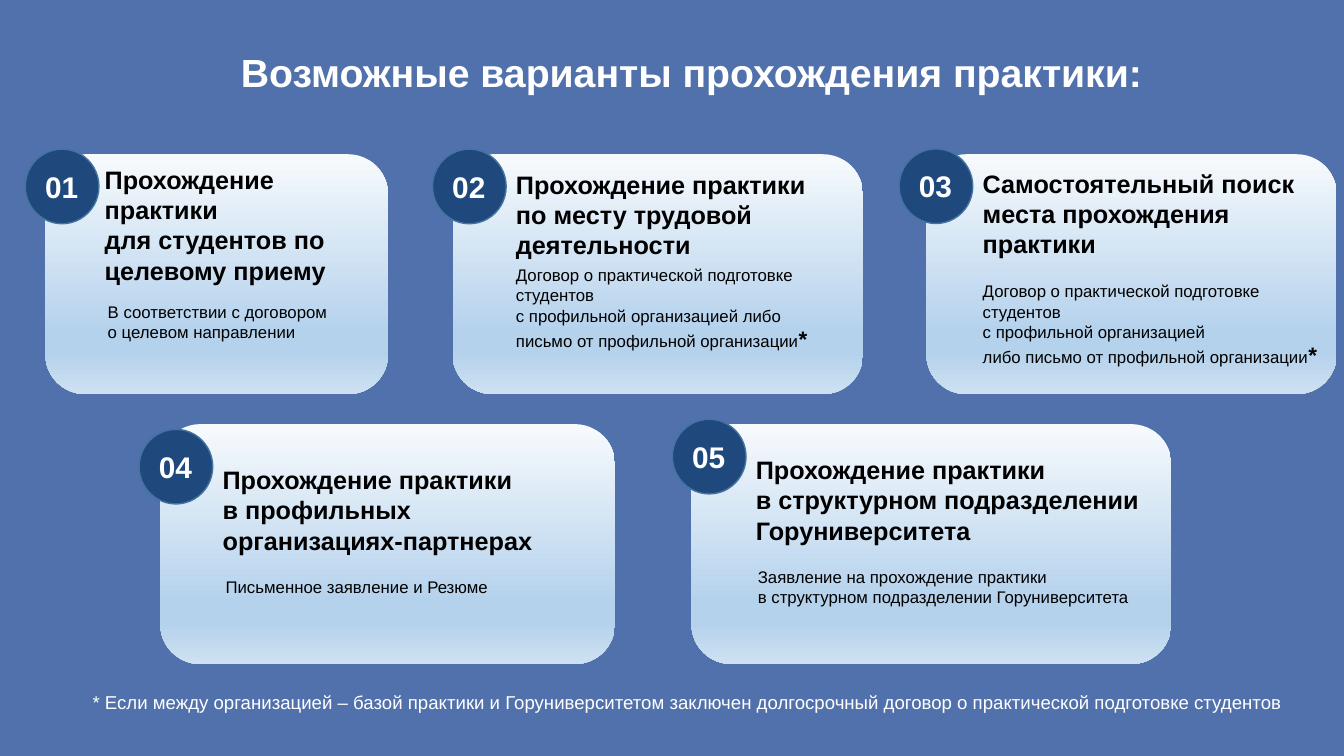
from copy import deepcopy
from dataclasses import dataclass

from pptx import Presentation
from pptx.dml.color import RGBColor
from pptx.enum.shapes import MSO_SHAPE as Preset
from pptx.enum.text import MSO_AUTO_SIZE as AutoSize, PP_ALIGN as Align
from pptx.oxml.ns import qn
from pptx.util import Inches, Pt

BACKGROUND = RGBColor(0x51, 0x71, 0xAC)
BADGE_FILL = RGBColor(0x1F, 0x49, 0x7D)
BADGE_LINE = RGBColor(0x43, 0x73, 0x9E)
WHITE = RGBColor(0xFF, 0xFF, 0xFF)
BLACK = RGBColor(0x00, 0x00, 0x00)
CARD_STOPS = [
    (0, RGBColor(0xF7, 0xFA, 0xFD)),
    (0.74, RGBColor(0xB5, 0xD2, 0xEC)),
    (0.83, RGBColor(0xB5, 0xD2, 0xEC)),
    (1, RGBColor(0xCE, 0xE1, 0xF2)),
]

# The slide is a grid of 100 columns by 100 rows
WIDTH, HEIGHT = Inches(13.33), Inches(7.5)
COLUMN, ROW = WIDTH / 100, HEIGHT / 100
TOP_ROW, BOTTOM_ROW = 20.4, 56.1
CARD_HEIGHT = 31.73
BADGE_WIDTH, BADGE_HEIGHT = 5.48, 9.87

TITLE = {"size": Pt(28), "bold": True, "color": WHITE}
HEADING = {"size": Pt(18), "bold": True, "color": BLACK}
DETAIL = {"size": Pt(12), "bold": False, "color": BLACK}
ASTERISK = {"size": Pt(16), "bold": True, "color": BLACK}
NUMBER = {"size": Pt(21.3), "bold": True, "color": WHITE}
FOOTNOTE = {"size": Pt(13.3), "bold": False, "color": WHITE}


@dataclass
class Option:
    """One practice option; boxes are left, top, width, height in grid units."""
    left: float
    top: float
    width: float
    badge: tuple
    heading_box: tuple
    heading: list
    detail_box: tuple
    detail: list


OPTIONS = [
    Option(3.38, TOP_ROW, 25.5, (1.88, 19.73),
           (7.05, 21.07, 20.63, 17.47),
           ["Прохождение практики", "для студентов по целевому приему"],
           (7.28, 39.2, 22.5, 6.67),
           ["В соответствии с договором", "о целевом направлении"]),
    Option(33.68, TOP_ROW, 30.53, (32.18, 19.73),
           (37.65, 21.73, 25.28, 13.47),
           ["Прохождение практики по месту трудовой деятельности"],
           (37.65, 34.4, 25.2, 13.07),
           ["Договор о практической подготовке студентов",
            "с профильной организацией либо письмо от профильной организации*"]),
    Option(68.93, TOP_ROW, 30.53, (66.9, 19.7),
           (72.38, 21.6, 25.28, 13.47),
           ["Самостоятельный поиск места прохождения практики"],
           (72.38, 36.53, 27.6, 13.07),
           ["Договор о практической подготовке студентов",
            "с профильной организацией",
            "либо письмо от профильной организации*"]),
    Option(11.93, BOTTOM_ROW, 33.83, (10.35, 56.8),
           (15.83, 60.8, 27.98, 13.47),
           ["Прохождение практики", "в профильных организациях-партнерах"],
           (16.05, 75.6, 29.63, 4),
           ["Письменное заявление и Резюме"]),
    Option(51.45, BOTTOM_ROW, 35.7, (50.03, 55.47),
           (55.5, 59.47, 32.85, 13.47),
           ["Прохождение практики",
            "в структурном подразделении Горуниверситета"],
           (55.65, 74.27, 30.38, 6.67),
           ["Заявление на прохождение практики",
            "в структурном подразделении Горуниверситета"]),
]


def place(left, top, width, height):
    """Turn grid units into slide lengths."""
    return (round(left * COLUMN), round(top * ROW),
            round(width * COLUMN), round(height * ROW))


def add_run(paragraph, text, style):
    run = paragraph.add_run()
    run.text = text
    run.font.name = "Arial"
    for name, value in style.items():
        if name == "color":
            run.font.color.rgb = value
        else:
            setattr(run.font, name, value)


def add_text(slide, box, lines, style, wrap=True, grow=True, **paragraph_format):
    """Add a text box; an asterisk that ends a line is set larger and bold."""
    frame = slide.shapes.add_textbox(*place(*box)).text_frame
    frame.word_wrap = wrap
    frame.auto_size = AutoSize.SHAPE_TO_FIT_TEXT if grow else AutoSize.NONE
    for index, line in enumerate(lines):
        paragraph = frame.add_paragraph() if index else frame.paragraphs[0]
        for name, value in paragraph_format.items():
            setattr(paragraph, name, value)
        add_run(paragraph, line.removesuffix("*"), style)
        if line.endswith("*"):
            add_run(paragraph, "*", ASTERISK)


def add_shape(slide, preset, box):
    shape = slide.shapes.add_shape(preset, *place(*box))
    shape.shadow.inherit = False
    return shape


def add_card(slide, box):
    card = add_shape(slide, Preset.ROUNDED_RECTANGLE, box)
    card.line.fill.background()
    card.fill.gradient()
    card.fill.gradient_angle = 270
    # The default gradient has two stops, so more are cloned
    stop_list = next(card.element.iter(qn("a:gsLst")))
    while len(stop_list) < len(CARD_STOPS):
        stop_list.append(deepcopy(stop_list[0]))
    for stop, (position, color) in zip(card.fill.gradient_stops, CARD_STOPS):
        stop.position = position
        stop.color.rgb = color


def add_badge(slide, left, top, number):
    badge = add_shape(slide, Preset.OVAL, (left, top, BADGE_WIDTH, BADGE_HEIGHT))
    badge.fill.solid()
    badge.fill.fore_color.rgb = BADGE_FILL
    badge.line.color.rgb = BADGE_LINE
    badge.line.width = Pt(1)
    add_text(slide, (left + 0.73, top + 1.87, 4.05, 6.13),
             [f"{number:02}"], NUMBER, wrap=False)


def add_option(slide, number, option):
    add_card(slide, (option.left, option.top, option.width, CARD_HEIGHT))
    add_text(slide, option.heading_box, option.heading, HEADING)
    add_text(slide, option.detail_box, option.detail, DETAIL)
    add_badge(slide, *option.badge, number)


def main():
    presentation = Presentation()
    presentation.slide_width, presentation.slide_height = WIDTH, HEIGHT
    slide = presentation.slides.add_slide(presentation.slide_layouts[6])
    slide.background.fill.solid()
    slide.background.fill.fore_color.rgb = BACKGROUND

    # Title
    add_text(slide, (4.43, 6.4, 94.05, 13.47),
             ["Возможные варианты прохождения практики:"], TITLE, grow=False,
             alignment=Align.CENTER, line_spacing=0.9, space_before=Pt(10))

    # Numbered option cards
    for number, option in enumerate(OPTIONS, start=1):
        add_option(slide, number, option)

    # Footnote
    add_text(slide, (6.15, 90.8, 90.75, 4.4),
             ["* Если между организацией – базой практики и Горуниверситетом "
              "заключен долгосрочный договор о практической подготовке студентов"],
             FOOTNOTE)

    presentation.save("out.pptx")


if __name__ == "__main__":
    main()
